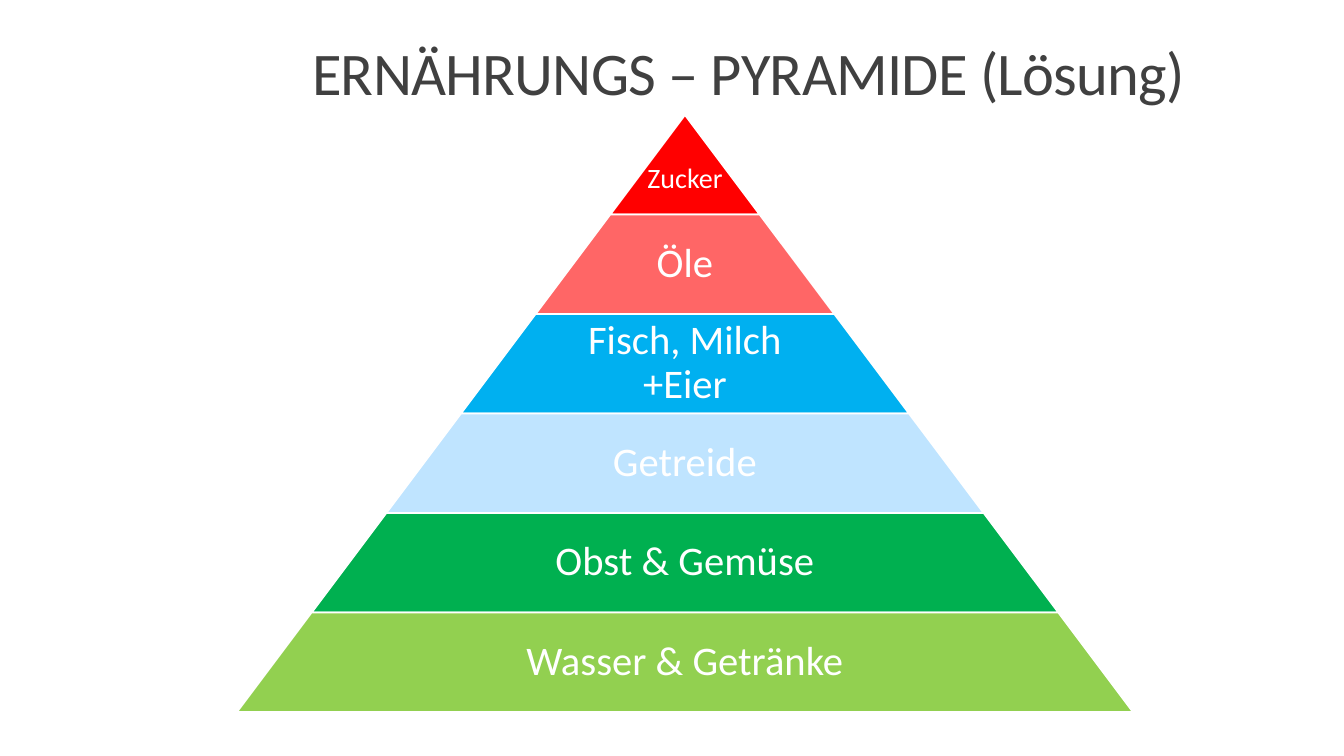
import pptx
import pptx.util
import pptx.dml.color
import pptx.enum.shapes
import pptx.enum.text

SCALE = 914400 / 100.8
FONT = "Calibri"
COLORS = {
    "white": "FFFFFF",
    "title": "404040",
    "sugar": "FF0000",
    "oil": "FF6666",
    "fish": "00B0F0",
    "grain": "BFE4FF",
    "fruit": "00B050",
    "water": "92D050",
}
BANDS = [
    ("Zucker", "sugar", 20),
    ("Öle", "oil", 29),
    ("Fisch, Milch +Eier", "fish", 29),
    ("Getreide", "grain", 29),
    ("Obst & Gemüse", "fruit", 29),
    ("Wasser & Getränke", "water", 29),
]
SLOPE = 0.75
ANCHOR = pptx.enum.text.MSO_ANCHOR


def px(n):
    return pptx.util.Emu(round(n * SCALE))


def color(name):
    return pptx.dml.color.RGBColor.from_string(COLORS[name])


def write(frame, text, size, tone, anchor, spacing):
    frame.word_wrap = True
    frame.auto_size = pptx.enum.text.MSO_AUTO_SIZE.NONE
    frame.vertical_anchor = anchor
    frame.text = text
    para = frame.paragraphs[0]
    para.alignment = pptx.enum.text.PP_ALIGN.CENTER
    para.line_spacing = spacing
    para.font.name = FONT
    para.font.size = pptx.util.Pt(size)
    para.font.color.rgb = color(tone)
    return para


def add_title(slide, box):
    title = slide.shapes.title
    title.left, title.top, title.width, title.height = map(px, box)
    frame = title.text_frame
    para = write(frame, "ERNÄHRUNGS – PYRAMIDE (Lösung)", 43.2, "title",
                 ANCHOR.BOTTOM, 0.85)
    frame.margin_bottom = px(67)
    para.runs[0]._r.get_or_add_rPr().set("spc", "-50")


def add_band(slide, box, tone):
    kind = pptx.enum.shapes.MSO_SHAPE.TRAPEZOID
    band = slide.shapes.add_shape(kind, *map(px, box))
    band.adjustments[0] = SLOPE
    band.shadow.inherit = False
    band.fill.solid()
    band.fill.fore_color.rgb = color(tone)
    band.line.color.rgb = color("white")
    band.line.width = pptx.util.Pt(1.25)


def add_label(slide, box, text, size, drop):
    frame = slide.shapes.add_textbox(*map(px, box)).text_frame
    frame.margin_left = frame.margin_right = px(8)
    frame.margin_top = px(4 + drop)
    frame.margin_bottom = px(4)
    write(frame, text, size, "white", ANCHOR.MIDDLE, 0.9)


def add_pyramid(slide, box):
    left, top, width, height = box
    mid = left + width / 2
    step = height / len(BANDS)
    for i, (text, tone, size) in enumerate(BANDS):
        base = width * (i + 1) / len(BANDS)
        y = top + i * step
        add_band(slide, (mid - base / 2, y, base, step), tone)
        room = base if i == 0 else base * 0.65
        drop = 30 if i == 0 else 0
        add_label(slide, (mid - room / 2, y, room, step), text, size, drop)


def main():
    deck = pptx.Presentation()
    deck.slide_width = px(1344)
    deck.slide_height = px(756)
    slide = deck.slides.add_slide(deck.slide_layouts[5])
    add_title(slide, (161, 52, 1175, 123))
    add_pyramid(slide, (237, 115, 896, 597))
    deck.save("out.pptx")


if __name__ == "__main__":
    main()
